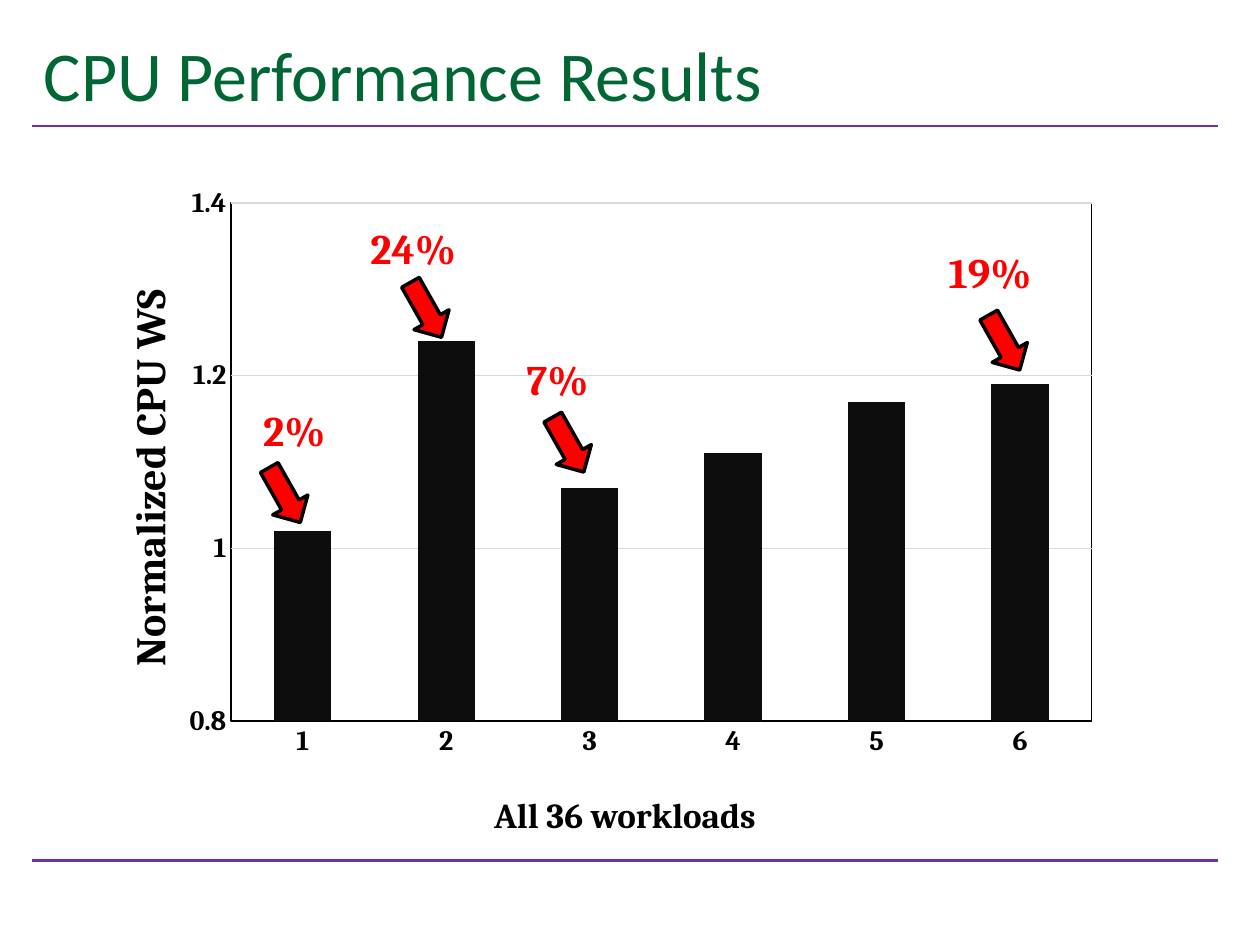
import pptx
import pptx.chart.data
import pptx.dml.color
import pptx.enum.chart
import pptx.enum.shapes
import pptx.enum.text
import pptx.oxml
import pptx.oxml.ns
import pptx.util

Pt = pptx.util.Pt
PP_ALIGN = pptx.enum.text.PP_ALIGN
ANCHOR = pptx.enum.text.MSO_ANCHOR
XL = pptx.enum.chart

# Content, lengths in points
TITLE = "CPU Performance Results"
CAPTION = "All 36 workloads"
AXIS_TITLE = "Normalized CPU WS"
CATEGORIES = ["1", "2", "3", "4", "5", "6"]
VALUES = [1.02, 1.24, 1.07, 1.11, 1.17, 1.19]
RULES_Y = [491.76, 72]
CALLOUTS = [  # text, text left and top, arrow left and top
    ("24%", (204.5, 123.8), (225.4, 165.6)),
    ("7%", (293.8, 198.7), (306.7, 242.6)),
    ("2%", (143.3, 227.5), (144.7, 271.4)),
    ("19%", (535, 137.5), (555.8, 184.3)),
]
BLACK, RED, PURPLE, GREEN, GREY = "000000", "FF0000", "7030A0", "006633", "D9D9D9"
SERIF = {"name": "Cambria", "bold": True}
PLOT_LAYOUT = {"layoutTarget": "inner", "xMode": "edge", "yMode": "edge",
               "x": 0.152, "y": 0.047, "w": 0.828, "h": 0.871}
AXIS_TITLE_LAYOUT = {"xMode": "edge", "yMode": "edge", "x": 0.04, "y": 0.18}


def rgb(value):
    return pptx.dml.color.RGBColor.from_string(value)


def set_attrs(obj, values):
    for key, value in values.items():
        setattr(obj, key, value)


def set_font(font, size, color, **values):
    set_attrs(font, {"size": Pt(size), **values})
    font.color.rgb = rgb(color)


def set_line(line, color, width):
    line.color.rgb = rgb(color)
    line.width = Pt(width)


def add_text(s, text, box, size, color, font, align=PP_ALIGN.LEFT, anchor=ANCHOR.TOP):
    tf = s.shapes.add_textbox(*map(Pt, box)).text_frame
    set_attrs(tf, {"word_wrap": True, "vertical_anchor": anchor})
    p = tf.paragraphs[0]
    p.alignment = align
    r = p.add_run()
    r.text = text
    set_font(r.font, size, color, **font)


def chart_xml(tag, body):
    return pptx.oxml.parse_xml(
        f"<c:{tag} {pptx.oxml.ns.nsdecls('c', 'a')}>{body}</c:{tag}>")


def layout_xml(values):
    items = "".join(f'<c:{k} val="{v}"/>' for k, v in values.items())
    return chart_xml("layout", f"<c:manualLayout>{items}</c:manualLayout>")


def set_layout(element, values, after=None):
    for old in element.findall(pptx.oxml.ns.qn("c:layout")):
        element.remove(old)
    if after is None:
        element.insert(0, layout_xml(values))
    else:
        element.find(pptx.oxml.ns.qn(after)).addnext(layout_xml(values))


def add_rule(s, y):
    line = s.shapes.add_connector(
        pptx.enum.shapes.MSO_CONNECTOR.STRAIGHT, Pt(18), Pt(y), Pt(696.24), Pt(y))
    set_line(line.line, PURPLE, 1.5)
    line._element.spPr.append(
        pptx.oxml.parse_xml(f"<a:effectLst {pptx.oxml.ns.nsdecls('a')}/>"))


def add_column_chart(s):
    data = pptx.chart.data.CategoryChartData()
    data.categories = CATEGORIES
    data.add_series("Series 1", VALUES)
    chart = s.shapes.add_chart(XL.XL_CHART_TYPE.COLUMN_CLUSTERED,
                               Pt(41.76), Pt(100), Pt(594), Pt(340), data).chart
    set_attrs(chart, {"has_legend": False, "has_title": False})
    set_font(chart.font, 16, BLACK, **SERIF)

    plot = chart.plots[0]
    set_attrs(plot, {"gap_width": 150, "vary_by_categories": False})
    fill = plot.series[0].format.fill
    fill.solid()
    fill.fore_color.rgb = rgb("0D0D0D")

    # Axes
    cat, val = chart.category_axis, chart.value_axis
    for axis in (cat, val):
        axis.major_tick_mark = axis.minor_tick_mark = XL.XL_TICK_MARK.NONE
        set_font(axis.tick_labels.font, 16, BLACK, **SERIF)
    set_line(cat.format.line, BLACK, 0.75)
    set_attrs(val, {"minimum_scale": 0.8, "maximum_scale": 1.4, "major_unit": 0.2})
    val.format.line.fill.background()
    set_line(val.major_gridlines.format.line, GREY, 0.75)
    set_attrs(val.tick_labels, {"number_format": "General",
                                "number_format_is_linked": False})
    p = val.axis_title.text_frame.paragraphs[0]
    r = p.add_run()
    r.text = AXIS_TITLE
    set_font(r.font, 24, BLACK, **SERIF)
    set_layout(val.axis_title._element, AXIS_TITLE_LAYOUT, "c:tx")

    # Plot area place and frame
    area = chart._chartSpace.chart.plotArea
    set_layout(area, PLOT_LAYOUT)
    area.append(chart_xml("spPr", f'<a:noFill/><a:ln w="9525"><a:solidFill>'
                          f'<a:srgbClr val="{BLACK}"/></a:solidFill></a:ln>'))


def add_arrow(s, left, top):
    sp = s.shapes.add_shape(pptx.enum.shapes.MSO_SHAPE.RIGHT_ARROW,
                            Pt(left), Pt(top), Pt(36), Pt(23))
    sp.rotation = 60.5
    sp.shadow.inherit = False
    sp.fill.solid()
    sp.fill.fore_color.rgb = rgb(RED)
    set_line(sp.line, BLACK, 2)


def main():
    prs = pptx.Presentation()
    set_attrs(prs, {"slide_width": Pt(720), "slide_height": Pt(540)})
    s = prs.slides.add_slide(prs.slide_layouts[6])
    for y in RULES_Y:
        add_rule(s, y)
    add_column_chart(s)
    add_text(s, TITLE, (18, 12.24, 678.24, 60), 40, GREEN, {"name": "Calibri"},
             anchor=ANCHOR.MIDDLE)
    # Gain callouts
    for text, label_at, arrow_at in CALLOUTS:
        add_arrow(s, *arrow_at)
        add_text(s, text, (*label_at, 77.8, 36), 24, RED, SERIF)
    add_text(s, CAPTION, (144, 450, 426.24, 31.7), 20, BLACK, SERIF, PP_ALIGN.CENTER)
    prs.save("out.pptx")


if __name__ == "__main__":
    main()
